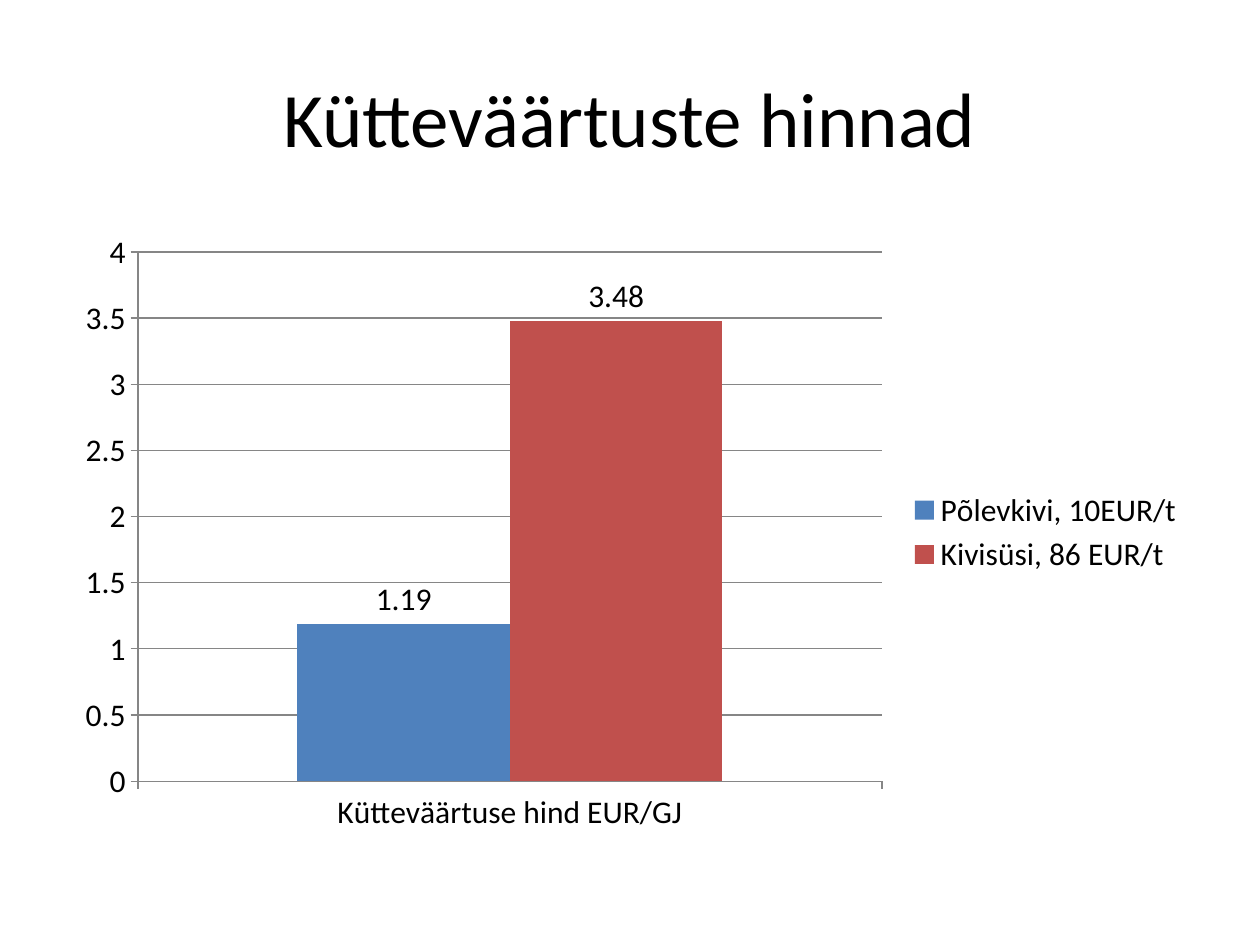
"""Builds a slide with a column chart comparing the price of heating value for two fuels."""
from dataclasses import dataclass

from pptx import Presentation
from pptx.chart.data import CategoryChartData
from pptx.dml.color import RGBColor
from pptx.enum.chart import XL_CHART_TYPE, XL_LABEL_POSITION, XL_LEGEND_POSITION, XL_TICK_MARK
from pptx.enum.text import MSO_ANCHOR, PP_ALIGN
from pptx.util import Pt


@dataclass(frozen=True)
class Theme:
    font: str = "Calibri"
    text: RGBColor = RGBColor(0x00, 0x00, 0x00)
    line: RGBColor = RGBColor(0x86, 0x86, 0x86)
    title_size: Pt = Pt(44)
    chart_size: Pt = Pt(18)


theme = Theme()
fuels = [
    ("Põlevkivi, 10EUR/t", 1.19, RGBColor(0x4F, 0x81, 0xBD)),
    ("Kivisüsi, 86 EUR/t", 3.48, RGBColor(0xC0, 0x50, 0x4D)),
]

prs = Presentation()
prs.slide_width, prs.slide_height = Pt(720), Pt(540)
s = prs.slides.add_slide(prs.slide_layouts[6])

tf = s.shapes.add_textbox(Pt(36), Pt(21.6), Pt(648), Pt(90)).text_frame
tf.word_wrap = True
tf.vertical_anchor = MSO_ANCHOR.MIDDLE
p = tf.paragraphs[0]
p.alignment = PP_ALIGN.CENTER
r = p.add_run()
r.text = "Kütteväärtuste hinnad"
r.font.name = theme.font
r.font.size = theme.title_size
r.font.color.rgb = theme.text

data = CategoryChartData()
data.categories = ["Kütteväärtuse hind EUR/GJ"]
for name, price, color in fuels:
    data.add_series(name, [price])

chart = s.shapes.add_chart(
    XL_CHART_TYPE.COLUMN_CLUSTERED, Pt(36), Pt(126), Pt(648), Pt(356.4), data
).chart
chart.has_title = False
chart.font.name = theme.font
chart.font.size = theme.chart_size
chart.font.color.rgb = theme.text
chart.has_legend = True
chart.legend.position = XL_LEGEND_POSITION.RIGHT
chart.legend.include_in_layout = False

for axis in (chart.category_axis, chart.value_axis):
    axis.major_tick_mark = XL_TICK_MARK.OUTSIDE
    axis.minor_tick_mark = XL_TICK_MARK.NONE
    axis.format.line.color.rgb = theme.line
    axis.format.line.width = Pt(0.75)

axis = chart.value_axis
axis.minimum_scale, axis.maximum_scale, axis.major_unit = 0, 4, 0.5
axis.has_major_gridlines = True
axis.major_gridlines.format.line.color.rgb = theme.line
axis.major_gridlines.format.line.width = Pt(0.75)

plot = chart.plots[0]
plot.gap_width = 150
plot.overlap = 0
plot.vary_by_categories = False
for series, (name, price, color) in zip(plot.series, fuels):
    series.format.fill.solid()
    series.format.fill.fore_color.rgb = color
    series.data_labels.show_value = True
    series.data_labels.position = XL_LABEL_POSITION.OUTSIDE_END

prs.save("out.pptx")
